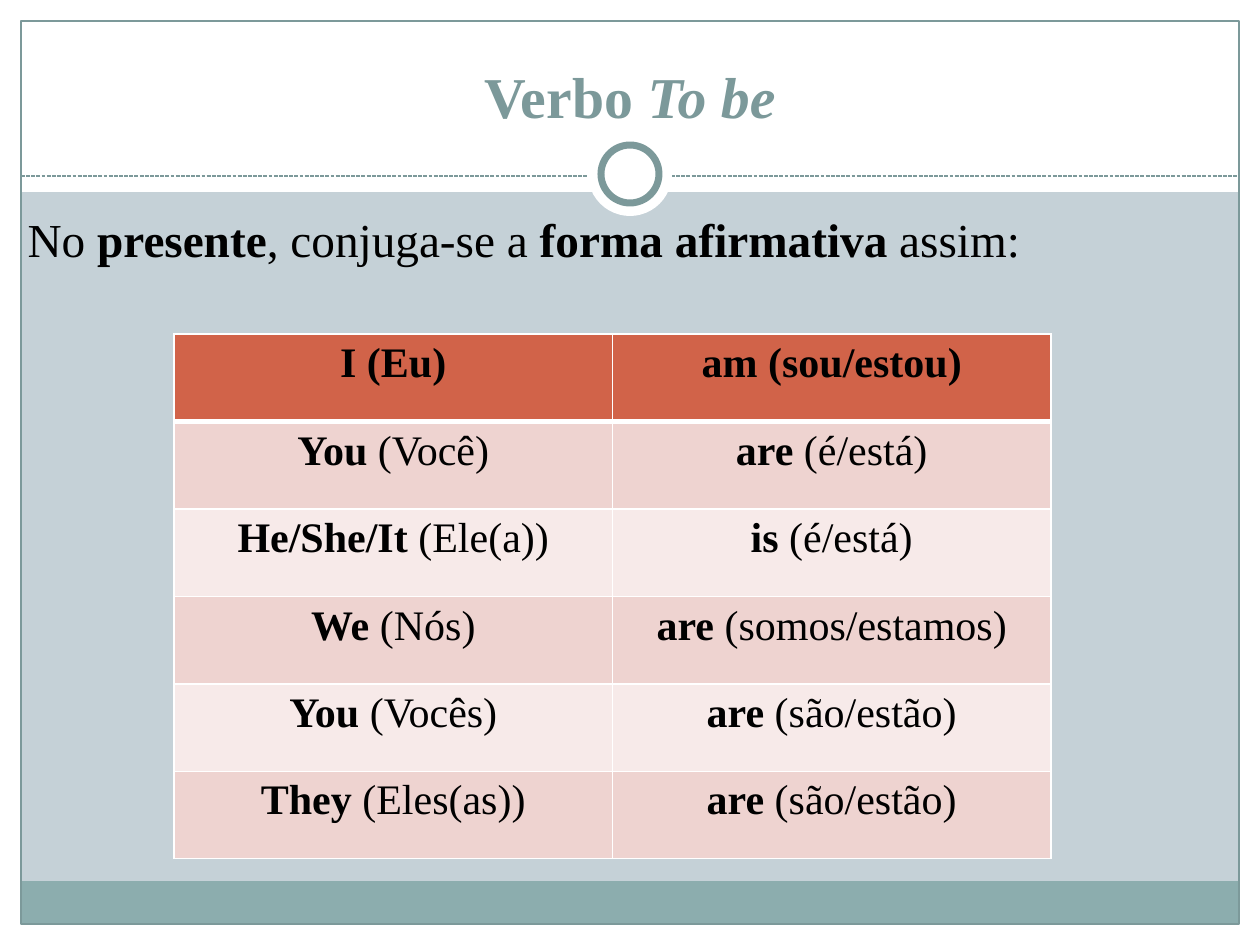
from lxml import etree
from pptx import Presentation, util as u
from pptx.dml.color import RGBColor
from pptx.enum import dml, shapes, text
from pptx.oxml.ns import qn

BLACK = RGBColor(0x00, 0x00, 0x00)
WHITE = RGBColor(0xFF, 0xFF, 0xFF)
TEAL = RGBColor(0x7C, 0x99, 0x9A)
FOOTER_TEAL = RGBColor(0x8C, 0xAD, 0xAE)
BACKDROP = RGBColor(0xC5, 0xD1, 0xD7)
HEADER_RED = RGBColor(0xD1, 0x63, 0x49)
BANDS = [RGBColor(0xF7, 0xEA, 0xE9), RGBColor(0xEE, 0xD3, 0xD0)]
FONT = "Times New Roman"

HEADING = [("Verbo ", "b"), ("To be", "bi")]
INTRO = [("No ", ""), ("presente", "b"), (", conjuga-se a ", ""),
         ("forma afirmativa ", "b"), ("assim:", "")]
CONJUGATION = [
    ([("I (Eu)", "b")], [("am (sou/estou)", "b")]),
    ([("You", "b"), (" (Você)", "")], [("are", "b"), (" (é/está)", "")]),
    ([("He/She/It", "b"), (" (Ele(a))", "")], [("is", "b"), (" (é/está)", "")]),
    ([("We", "b"), (" (Nós)", "")], [("are", "b"), (" (somos/estamos)", "")]),
    ([("You", "b"), (" (Vocês)", "")], [("are", "b"), (" (são/estão)", "")]),
    ([("They", "b"), (" (Eles(as))", "")], [("are", "b"), (" (são/estão)", "")]),
]

RECT, OVAL = shapes.MSO_SHAPE.RECTANGLE, shapes.MSO_SHAPE.OVAL
WIDTH, HEIGHT, MARGIN = 1260, 945, 21
INNER_W, INNER_H = WIDTH - 2 * MARGIN, HEIGHT - 2 * MARGIN
PANELS = [
    (RECT, (0, HEIGHT - MARGIN, WIDTH, MARGIN), WHITE, None, 0),
    (RECT, (0, 0, WIDTH, 192), WHITE, None, 0),
    (RECT, (0, 0, MARGIN, HEIGHT), WHITE, None, 0),
    (RECT, (WIDTH - MARGIN, 0, MARGIN, HEIGHT), WHITE, None, 0),
    (RECT, (MARGIN, 881, INNER_W, 43), FOOTER_TEAL, None, 0),
    (RECT, (MARGIN, MARGIN, INNER_W, INNER_H), None, TEAL, 0.75),
]
RINGS = [
    (OVAL, (588, 132, 84, 84), WHITE, None, 0),
    (OVAL, (601, 145, 58, 58), WHITE, TEAL, 4),
]


def px(n):
    return u.Emu(round(n * 914400 / 126))


def write(paragraph, runs, size, color=BLACK, align=text.PP_ALIGN.CENTER):
    paragraph.alignment = align
    for words, style in runs:
        run = paragraph.add_run()
        run.text = words
        font = run.font
        font.name, font.size = FONT, u.Pt(size)
        font.bold, font.italic = "b" in style, "i" in style
        font.color.rgb = color


def draw(slide, kind, box, fill, line, weight):
    part = slide.shapes.add_shape(kind, *map(px, box))
    part.shadow.inherit = False
    if fill is None:
        part.fill.background()
    else:
        part.fill.solid()
        part.fill.fore_color.rgb = fill
    if line is None:
        part.line.fill.background()
    else:
        part.line.color.rgb = line
        part.line.width = u.Pt(weight)


def draw_divider(slide, y):
    divider = slide.shapes.add_connector(
        shapes.MSO_CONNECTOR.STRAIGHT, px(MARGIN), px(y), px(WIDTH - MARGIN), px(y))
    divider.line.color.rgb = TEAL
    divider.line.width = u.Pt(0.75)
    divider.line.dash_style = dml.MSO_LINE.SQUARE_DOT
    etree.SubElement(divider.element.spPr, qn("a:effectLst"))


def place(holder, box, anchor):
    holder.left, holder.top, holder.width, holder.height = map(px, box)
    frame = holder.text_frame
    frame.word_wrap = True
    frame.auto_size = text.MSO_AUTO_SIZE.NONE
    frame.vertical_anchor = anchor
    holder.element.getparent().append(holder.element)
    return frame.paragraphs[0]


def set_borders(cell, weights):
    props = cell._tc.get_or_add_tcPr()
    for side, weight in weights.items():
        edge = etree.SubElement(props, qn(f"a:ln{side}"), w=str(u.Pt(weight)))
        fill = etree.SubElement(edge, qn("a:solidFill"))
        etree.SubElement(fill, qn("a:srgbClr"), val=str(WHITE))


def add_conjugation(slide, box):
    grid = slide.shapes.add_table(
        len(CONJUGATION), len(CONJUGATION[0]), *map(px, box)).table
    for r, pair in enumerate(CONJUGATION):
        for c, runs in enumerate(pair):
            cell = grid.cell(r, c)
            set_borders(cell, {"L": 1, "R": 1, "T": 3 if r == 1 else 1,
                               "B": 3 if r == 0 else 1})
            cell.fill.solid()
            cell.fill.fore_color.rgb = BANDS[r % 2] if r else HEADER_RED
            write(cell.text_frame.paragraphs[0], runs, size=24)


def main():
    deck = Presentation()
    deck.slide_width, deck.slide_height = px(WIDTH), px(HEIGHT)
    slide = deck.slides.add_slide(deck.slide_layouts[1])
    slide.background.fill.solid()
    slide.background.fill.fore_color.rgb = BACKDROP
    heading, intro = slide.placeholders

    for panel in PANELS:
        draw(slide, *panel)
    draw_divider(slide, 176)
    for ring in RINGS:
        draw(slide, *ring)

    line = place(heading, (42, 32, 1176, 104), text.MSO_ANCHOR.BOTTOM)
    write(line, HEADING, size=33, color=TEAL)
    line = place(intro, (15, 204, 1231, 718), text.MSO_ANCHOR.TOP)
    write(line, INTRO, size=27, align=text.PP_ALIGN.LEFT)
    bullet = line._p.get_or_add_pPr()
    bullet.set("marL", "0")
    bullet.set("indent", "0")
    etree.SubElement(bullet, qn("a:buNone"))

    add_conjugation(slide, (174, 334, 877, 525))
    deck.save("out.pptx")


if __name__ == "__main__":
    main()
